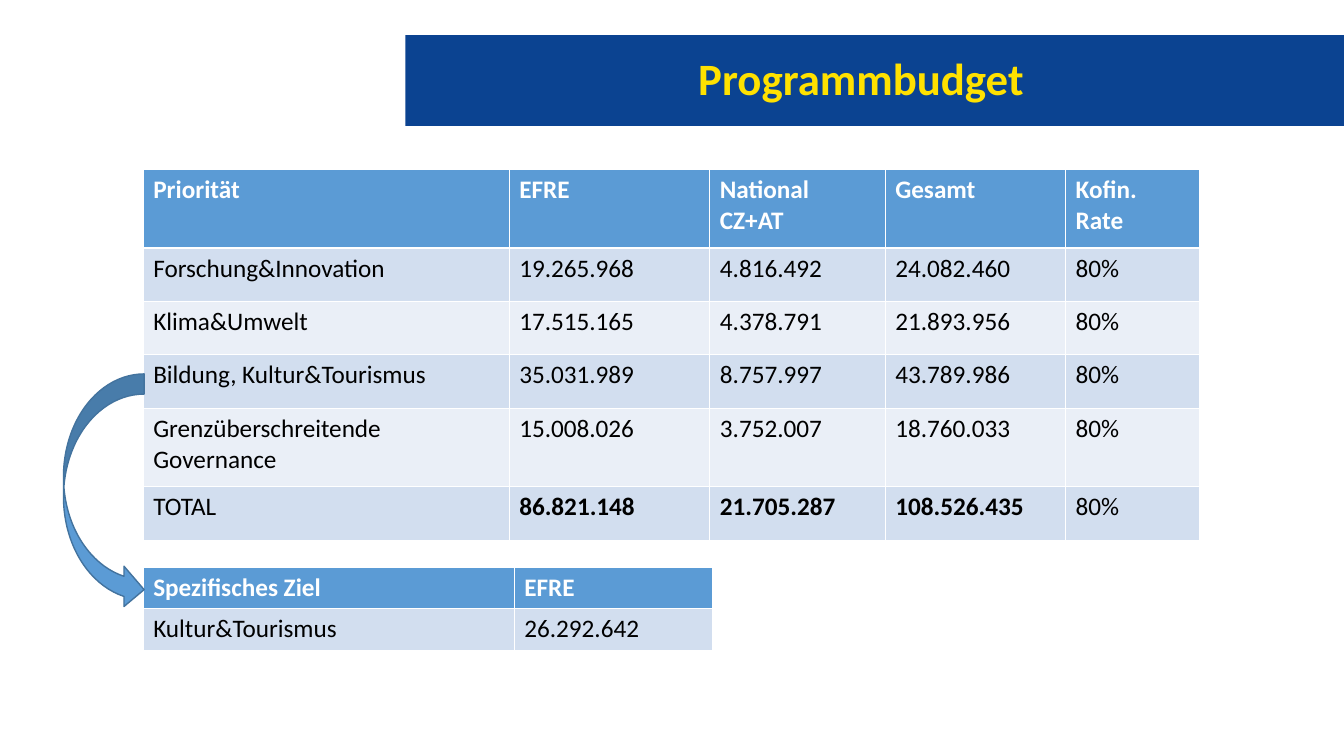
import pptx
import pptx.util
import pptx.dml.color
import pptx.enum.shapes
import pptx.enum.text

Inches = pptx.util.Inches
Pt = pptx.util.Pt
SHAPE = pptx.enum.shapes.MSO_SHAPE

COLORS = {
    "navy": "0B4391", "gold": "FFE100", "blue": "5B9BD5", "edge": "43739E",
    "dark": "D2DEEF", "light": "EAEFF7", "white": "FFFFFF", "black": "000000",
}

BUDGET = [
    ["Priorität", "EFRE", "National CZ+AT", "Gesamt", "Kofin. Rate"],
    ["Forschung&Innovation", "19.265.968", "4.816.492", "24.082.460", "80%"],
    ["Klima&Umwelt", "17.515.165", "4.378.791", "21.893.956", "80%"],
    ["Bildung, Kultur&Tourismus", "35.031.989", "8.757.997", "43.789.986", "80%"],
    ["Grenzüberschreitende Governance", "15.008.026", "3.752.007", "18.760.033", "80%"],
    ["TOTAL", "86.821.148", "21.705.287", "108.526.435", "80%"],
]
TARGET = [["Spezifisches Ziel", "EFRE"], ["Kultur&Tourismus", "26.292.642"]]


class Deck:
    def __init__(self, font):
        self.font = font
        self.prs = pptx.Presentation()
        self.prs.slide_width = Inches(13.33)
        self.prs.slide_height = Inches(7.5)
        self.slide = self.prs.slides.add_slide(self.prs.slide_layouts[5])

    def color(self, name):
        return pptx.dml.color.RGBColor.from_string(COLORS[name])

    def style(self, para, size, color, bold):
        para.font.name = self.font
        para.font.size = Pt(size)
        para.font.bold = bold
        para.font.color.rgb = self.color(color)

    def paint(self, item, color):
        item.fill.solid()
        item.fill.fore_color.rgb = self.color(color)

    def shape(self, kind, box, fill, line=None):
        shape = self.slide.shapes.add_shape(kind, *map(Inches, box))
        shape.shadow.inherit = False
        self.paint(shape, fill)
        if line:
            shape.line.color.rgb = self.color(line)
            shape.line.width = Pt(1)
        else:
            shape.line.fill.background()
        return shape

    def title(self, text, box):
        title = self.slide.shapes.title
        title.left, title.top, title.width, title.height = map(Inches, box)
        frame = title.text_frame
        frame.text = text
        frame.auto_size = pptx.enum.text.MSO_AUTO_SIZE.NONE
        frame.vertical_anchor = pptx.enum.text.MSO_ANCHOR.MIDDLE
        para = frame.paragraphs[0]
        para.alignment = pptx.enum.text.PP_ALIGN.CENTER
        para.line_spacing = 0.9
        self.style(para, 32, "gold", True)
        return title

    def table(self, rows, left, top, widths, heights, total=False):
        frame = self.slide.shapes.add_table(
            len(rows), len(widths), Inches(left), Inches(top),
            Inches(sum(widths)), Inches(sum(heights)))
        table = frame.table
        for col, width in zip(table.columns, widths):
            col.width = Inches(width)
        for row, height in zip(table.rows, heights):
            row.height = Inches(height)
        for i, texts in enumerate(rows):
            head = i == 0
            fill = "blue" if head else "dark" if i % 2 else "light"
            last = total and i == len(rows) - 1
            for j, text in enumerate(texts):
                cell = table.cell(i, j)
                cell.text = text
                self.paint(cell, fill)
                # The sums in the total row are bold, its label and rate are not
                bold = head or (last and 0 < j < len(texts) - 1)
                self.style(cell.text_frame.paragraphs[0], 18,
                           "white" if head else "black", bold)


def main():
    deck = Deck("Calibri")

    # Title on its band
    title = deck.title("Programmbudget", (4.02, 0.35, 9.04, 0.9))
    band = deck.shape(SHAPE.RECTANGLE, (4.02, 0.35, 9.31, 0.9), "navy")
    title._element.addprevious(band._element)

    # Budget by priority
    deck.table(BUDGET, 1.42, 1.68, [3.63, 1.99, 1.74, 1.79, 1.33],
               [0.78, 0.53, 0.53, 0.53, 0.78, 0.53], total=True)

    # Specific target, with the arrow that leads to it
    deck.table(TARGET, 1.42, 5.63, [3.68, 1.97], [0.41, 0.41])
    deck.shape(SHAPE.CURVED_RIGHT_ARROW, (0.63, 3.71, 0.8, 2.34), "blue", "edge")

    deck.prs.save("out.pptx")


if __name__ == "__main__":
    main()
